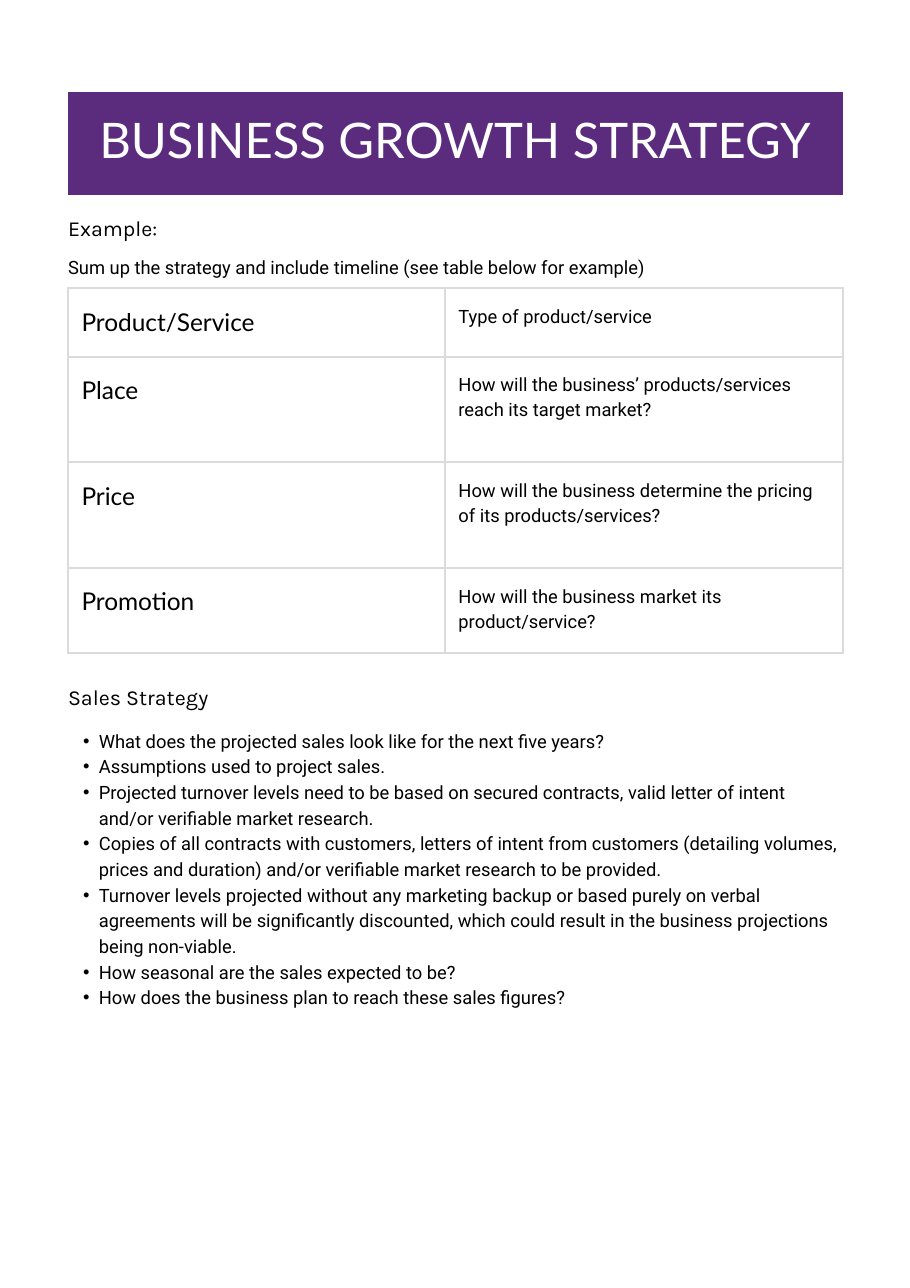
from lxml import etree
from pptx import Presentation
from pptx import util as u
from pptx.dml.color import RGBColor
from pptx.enum import text
from pptx.oxml.ns import qn

PURPLE = RGBColor(0x5B, 0x2C, 0x7D)
GREY = RGBColor(0xDB, 0xDB, 0xDB)
WHITE = RGBColor(0xFF, 0xFF, 0xFF)
BLACK = RGBColor(0, 0, 0)

LEFT, WIDTH = 1.57, 17.86

TITLE = {"name": "Lato", "size": u.Pt(32)}
HEADING = {"name": "Karla", "size": u.Pt(14)}
LABEL = {"name": "Lato", "size": u.Pt(16)}
BODY = {"name": "Roboto", "size": u.Pt(12)}

MARKETING_MIX = [
    ("Product/Service", "Type of product/service"),
    ("Place", "How will the business’ products/services reach its target market?"),
    ("Price", "How will the business determine the pricing of its products/services?"),
    ("Promotion", "How will the business market its product/service?"),
]
SALES_POINTS = [
    "What does the projected sales look like for the next five years?",
    "Assumptions used to project sales.",
    "Projected turnover levels need to be based on secured contracts, "
    "valid letter of intent and/or verifiable market research.",
    "Copies of all contracts with customers, letters of intent from customers "
    "(detailing volumes, prices and duration) and/or verifiable market research "
    "to be provided.",
    "Turnover levels projected without any marketing backup or based purely on "
    "verbal agreements will be significantly discounted, which could result in "
    "the business projections being non-viable.",
    "How seasonal are the sales expected to be?",
    "How does the business plan to reach these sales figures?",
]


def set_all(target, values):
    for name, value in values.items():
        setattr(target, name, value)


class StrategyPage:
    line_ratio = 1.4

    def __init__(self, page):
        self.page = page

    def add_words(self, para, words, style, color=BLACK, align=text.PP_ALIGN.LEFT):
        span = para.add_run()
        span.text = words
        set_all(span.font, style)
        span.font.color.rgb = color
        set_all(para, {
            "alignment": align,
            "line_spacing": u.Pt(style["size"].pt * self.line_ratio),
        })

    def text_box(self, top, height, lines, style, bulleted=False):
        box = self.page.shapes.add_textbox(
            u.Cm(LEFT), u.Cm(top), u.Cm(WIDTH), u.Cm(height))
        frame = box.text_frame
        set_all(frame, {
            "word_wrap": True, "margin_left": 0, "margin_right": 0,
            "margin_top": 0, "margin_bottom": 0,
        })
        for index, line in enumerate(lines):
            para = frame.add_paragraph() if index else frame.paragraphs[0]
            self.add_words(para, line, style)
            if bulleted:
                self.bullet(para)

    def bullet(self, para):
        para.level = 1
        props = para._p.get_or_add_pPr()
        props.set("marL", str(u.Cm(0.71)))
        props.set("indent", str(u.Cm(-0.36)))
        etree.SubElement(props, qn("a:buFont"), typeface="Arial")
        etree.SubElement(props, qn("a:buChar"), char="•")

    def table(self, top, columns, rows):
        frame = self.page.shapes.add_table(
            len(rows), len(columns), u.Cm(LEFT), u.Cm(top),
            u.Cm(sum(columns)), u.Cm(sum(rows)))
        grid = frame.table
        set_all(grid, {"first_row": False, "horz_banding": False})
        for column, width in zip(grid.columns, columns):
            column.width = u.Cm(width)
        for row, height in zip(grid.rows, rows):
            row.height = u.Cm(height)
        return grid

    def cell(self, cell, words, style, margin, fill=None, border=None, **options):
        inset = u.Cm(margin)
        set_all(cell, {
            "margin_left": inset, "margin_right": inset,
            "margin_top": inset, "margin_bottom": inset,
        })
        self.borders(cell, border)
        if fill is None:
            cell.fill.background()
        else:
            cell.fill.solid()
            cell.fill.fore_color.rgb = fill
        self.add_words(cell.text_frame.paragraphs[0], words, style, **options)

    def borders(self, cell, color):
        props = cell._tc.get_or_add_tcPr()
        for side in ("lnL", "lnR", "lnT", "lnB"):
            line = etree.SubElement(props, qn(f"a:{side}"), w=str(u.Pt(1.5)))
            if color is None:
                etree.SubElement(line, qn("a:noFill"))
            else:
                paint = etree.SubElement(line, qn("a:solidFill"))
                etree.SubElement(paint, qn("a:srgbClr"), val=str(color))

    def banner(self, top, height, words):
        grid = self.table(top, [WIDTH], [height])
        self.cell(grid.cell(0, 0), words, TITLE, 0.2, fill=PURPLE,
                  color=WHITE, align=text.PP_ALIGN.CENTER)

    def mix_table(self, top, columns, rows, entries):
        grid = self.table(top, columns, rows)
        for row, entry in enumerate(entries):
            for column, (words, style) in enumerate(zip(entry, (LABEL, BODY))):
                self.cell(grid.cell(row, column), words, style, 0.31, border=GREY)


def main():
    deck = Presentation()
    set_all(deck, {"slide_width": u.Cm(20.98), "slide_height": u.Cm(29.69)})
    sheet = StrategyPage(deck.slides.add_slide(deck.slide_layouts[6]))

    sheet.banner(2.11, 2.39, "BUSINESS GROWTH STRATEGY")
    sheet.text_box(4.85, 1.37, ["Example:"], HEADING)
    sheet.text_box(
        5.82, 0.56,
        ["Sum up the strategy and include timeline (see table below for example)"],
        BODY)
    sheet.mix_table(6.65, [8.69, 9.17], [1.57, 2.44, 2.44, 1.95], MARKETING_MIX)
    sheet.text_box(15.67, 1.37, ["Sales Strategy"], HEADING)
    sheet.text_box(16.74, 6.96, SALES_POINTS, BODY, bulleted=True)

    deck.save("out.pptx")


if __name__ == "__main__":
    main()
